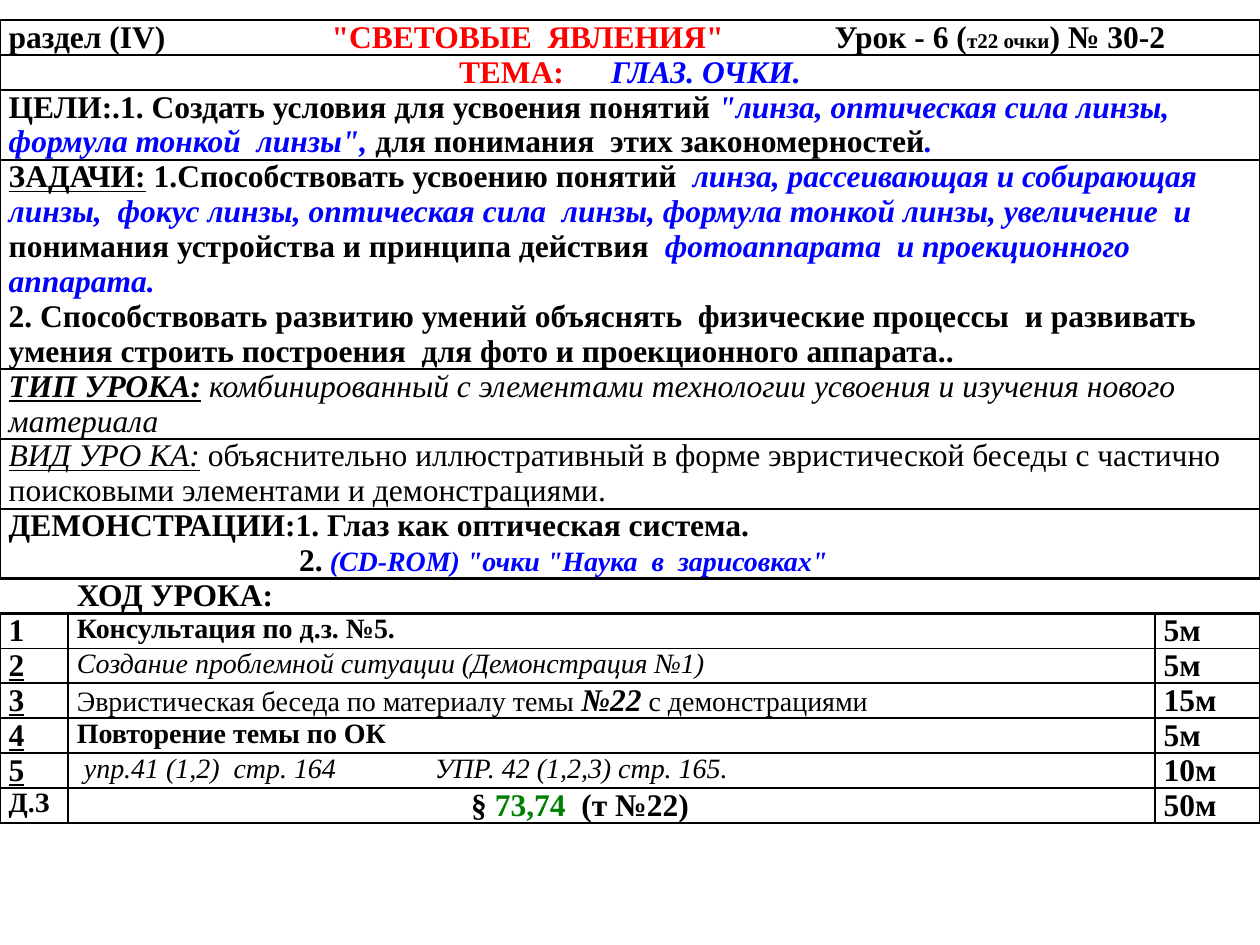
import dataclasses

import pptx
import pptx.dml.color
import pptx.enum.text
import pptx.oxml
import pptx.oxml.ns
import pptx.util

Pt = pptx.util.Pt
CENTER = pptx.enum.text.PP_ALIGN.CENTER


@dataclasses.dataclass(frozen=True)
class Theme:
    font: str = "Times New Roman"
    black: str = "000000"
    red: str = "FF0000"
    blue: str = "0000FF"
    green: str = "008000"
    main: int = 18
    step: int = 16
    note: int = 12
    thin: float = 1
    thick: float = 1.5
    inset: int = 5
    line: int = 14


THEME = Theme()
COLS = (39, 621, 60)
# Height of each row in text lines
LINES = (1, 1, 2, 6, 2, 2, 2, 1, 1, 1, 1, 1, 1, 1)
# Rules between rows, from the top edge to the bottom edge
THICK_RULES = {1, 2, 6, 7, 8, 13, 14}
HEAD, FIRST, LAST = 7, 8, 13
BOXED = {1, 6}


def put(par, text, size=THEME.main, color=THEME.black, bold=True,
        italic=False, under=False, spread=None):
    """Add a run; spread is extra letter spacing in points."""
    run = par.add_run()
    run.text = text
    font = run.font
    font.name, font.size = THEME.font, Pt(size)
    font.bold, font.italic, font.underline = bold, italic, under
    font.color.rgb = pptx.dml.color.RGBColor.from_string(color)
    if spread:
        font._element.set("spc", str(round(spread * 100)))


def key(par, text, **form):
    """Add a term in blue italics."""
    put(par, text, color=THEME.blue, italic=True, **form)


def stop(par, *places):
    """Set left tab stops, in points from the text edge."""
    stops = "".join(f'<a:tab pos="{Pt(x)}" algn="l"/>' for x in places)
    par._p.get_or_add_pPr().append(pptx.oxml.parse_xml(
        f'<a:tabLst {pptx.oxml.ns.nsdecls("a")}>{stops}</a:tabLst>'))


def indent(par, left):
    props = par._p.get_or_add_pPr()
    props.set("marL", str(Pt(left)))
    props.set("indent", "0")


def shrink(par):
    """Give an empty paragraph a small type size, so its row stays low."""
    par._p.append(pptx.oxml.parse_xml(
        f'<a:endParaRPr {pptx.oxml.ns.nsdecls("a")} '
        f'sz="{THEME.note * 100}"/>'))


def border(cell, **sides):
    """Draw sides L, R, T, B with the given widths; zero hides a side."""
    props = cell._tc.get_or_add_tcPr()
    for side, width in sides.items():
        paint = (f'<a:solidFill><a:srgbClr val="{THEME.black}"/></a:solidFill>'
                 if width else "<a:noFill/>")
        props.append(pptx.oxml.parse_xml(
            f'<a:ln{side} {pptx.oxml.ns.nsdecls("a")} w="{Pt(width)}">'
            f'{paint}</a:ln{side}>'))


def edges(row):
    """Widths of the four upright rules in a row."""
    thin, thick = THEME.thin, THEME.thick
    if row == HEAD:
        return (0,) * 4
    if row < HEAD:
        return (thick if row in BOXED else thin,) * 4
    if row == LAST:
        return thick, thin, thin, thick
    return thick, thick, thin, thin


def add_grid(slide):
    frame = slide.shapes.add_table(
        len(LINES), len(COLS), 0, Pt(11.5), Pt(sum(COLS)), Pt(497))
    table = frame.table
    table.first_row = table.horz_banding = False
    for col, width in zip(table.columns, COLS):
        col.width = Pt(width)
    rules = [THEME.thick if i in THICK_RULES else THEME.thin
             for i in range(len(LINES) + 1)]
    for i, count in enumerate(LINES):
        table.rows[i].height = Pt(count * THEME.line)
        side = edges(i)
        for j in range(len(COLS)):
            cell = table.cell(i, j)
            cell.margin_left = cell.margin_right = Pt(THEME.inset)
            cell.margin_top = cell.margin_bottom = 0
            border(cell, L=side[j], R=side[j + 1], T=rules[i], B=rules[i + 1])
            cell.fill.background()
        if i < HEAD:
            table.cell(i, 0).merge(table.cell(i, len(COLS) - 1))
    frame.height = Pt(497)
    return table


def lead(table, row, col=0):
    """First paragraph of a cell."""
    return table.cell(row, col).text_frame.paragraphs[0]


def more(table, row):
    """New paragraph in a full-width row."""
    return table.cell(row, 0).text_frame.add_paragraph()


def fill_top(table):
    par = lead(table, 0)
    stop(par, 184.5, 472)
    put(par, "раздел (IV)\t")
    put(par, "\"СВЕТОВЫЕ  ЯВЛЕНИЯ\"\t", color=THEME.red)
    put(par, "Урок - 6 (")
    put(par, "т22 очки", size=THEME.note)
    put(par, ") № 30-2")

    par = lead(table, 1)
    par.alignment = CENTER
    put(par, "ТЕМА:", color=THEME.red)
    put(par, " ", color=THEME.red, spread=22.5)
    key(par, "ГЛАЗ. ОЧКИ.")


def fill_aims(table):
    par = lead(table, 2)
    put(par, "ЦЕЛИ:.1. Создать условия для усвоения понятий ")
    key(par, "\"линза, оптическая сила линзы,  формула тонкой  линзы\", ")
    put(par, "для понимания  этих закономерностей")
    key(par, ".")

    par = lead(table, 3)
    put(par, "ЗАДАЧИ:", under=True)
    put(par, " 1.Способствовать усвоению понятий ")
    key(par, " линза, рассеивающая и собирающая линзы,  фокус линзы, "
             "оптическая сила  линзы, формула тонкой линзы, увеличение  и ")
    put(par, "понимания устройства и принципа действия  ")
    key(par, "фотоаппарата  и проекционного аппарата.")
    put(more(table, 3),
        "2. Способствовать развитию умений объяснять  физические процессы  "
        "и развивать умения строить построения  для фото и проекционного "
        "аппарата..")


def fill_kind(table):
    par = lead(table, 4)
    put(par, "ТИП УРОКА:", italic=True, under=True)
    put(par, " комбинированный с элементами технологии усвоения и изучения "
             "нового материала", bold=False, italic=True)

    par = lead(table, 5)
    put(par, "ВИД УРО КА:", bold=False, italic=True, under=True)
    put(par, " объяснительно иллюстративный в форме эвристической беседы "
             "с частично поисковыми элементами и демонстрациями.", bold=False)

    put(lead(table, 6), "ДЕМОНСТРАЦИИ:1. Глаз как оптическая система.")
    par = more(table, 6)
    indent(par, 166)
    put(par, "2.")
    key(par, " (CD-ROM) \"очки \"Наука  в  зарисовках\"", size=THEME.step)


def fill_plan(table):
    put(lead(table, HEAD, 1), "ХОД УРОКА:")
    for col in (0, 2):
        shrink(lead(table, HEAD, col))
    plain = dict(size=THEME.step, bold=False)
    slant = dict(plain, italic=True)
    steps = (
        (5, [("Консультация по д.з. №5.", dict(size=THEME.step))]),
        (5, [("Создание проблемной ситуации (Демонстрация №1)", slant)]),
        (15, [("Эвристическая беседа по материалу темы ", plain),
              ("№22", dict(italic=True)),
              (" с демонстрациями", plain)]),
        (5, [("Повторение темы по ОК", dict(size=THEME.step))]),
        (10, [(" упр.41 (1,2)  стр. 164\tУПР. 42 (1,2,3) стр. 165.", slant)]),
    )
    for num, (time, runs) in enumerate(steps, 1):
        row = FIRST + num - 1
        put(lead(table, row), str(num), under=num > 1)
        par = lead(table, row, 1)
        for text, form in runs:
            if "\t" in text:
                stop(par, 204.5)
            put(par, text, **form)
        put(lead(table, row, 2), f"{time}м")


def fill_home(table):
    put(lead(table, LAST), "Д.З", size=THEME.step)
    table.cell(LAST, 1).margin_right = Pt(41)
    par = lead(table, LAST, 1)
    par.alignment = CENTER
    put(par, "§ ")
    put(par, "73,74", color=THEME.green)
    put(par, "  (т №22)")
    put(lead(table, LAST, 2), "50м")


def main():
    deck = pptx.Presentation()
    deck.slide_width, deck.slide_height = Pt(720), Pt(540)
    slide = deck.slides.add_slide(deck.slide_layouts[6])
    table = add_grid(slide)
    for fill in (fill_top, fill_aims, fill_kind, fill_plan, fill_home):
        fill(table)
    deck.save("out.pptx")


if __name__ == "__main__":
    main()
